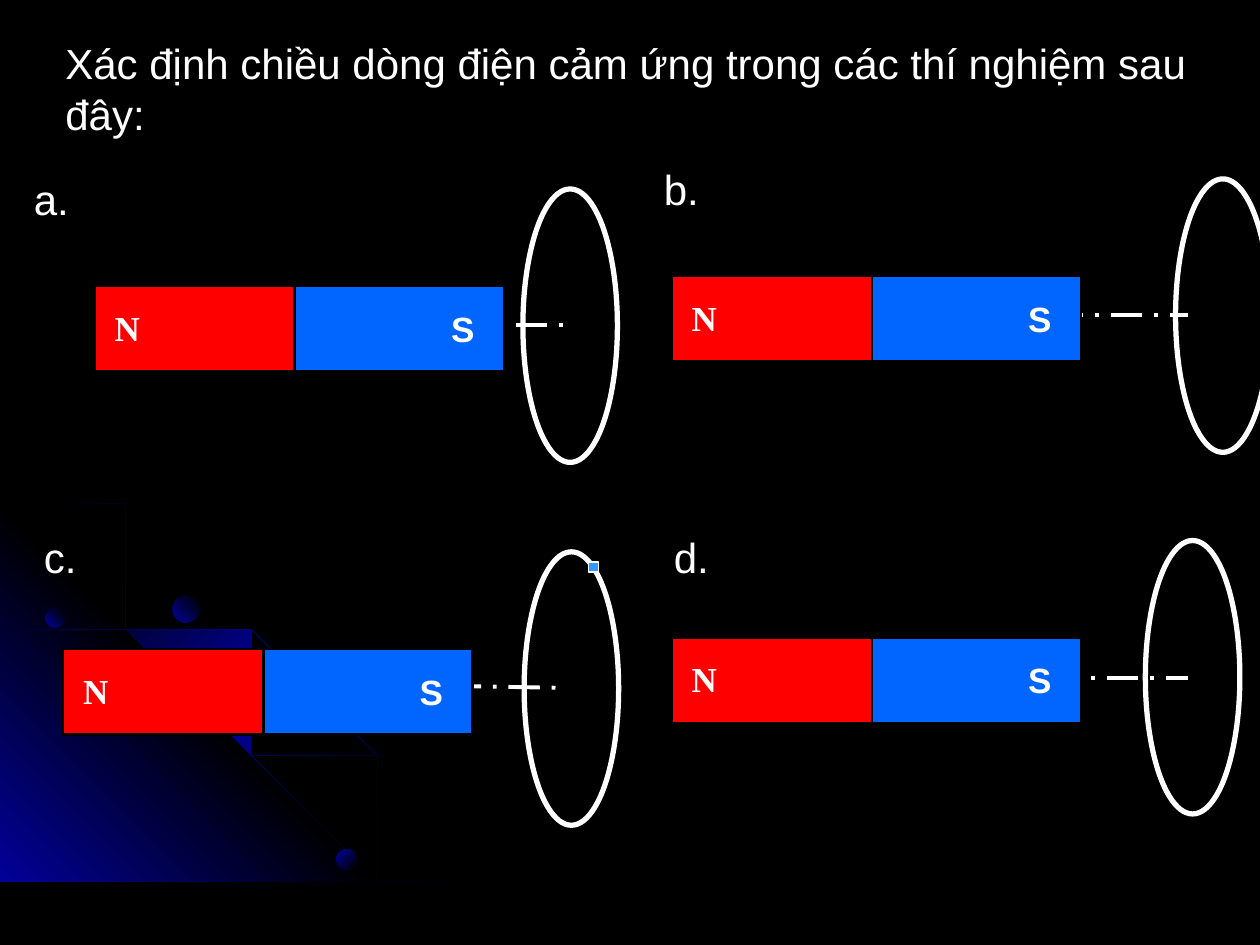
from copy import deepcopy
from pptx import Presentation
from pptx.dml.color import RGBColor
from pptx.enum.dml import MSO_LINE
from pptx.enum.shapes import MSO_CONNECTOR, MSO_SHAPE
from pptx.enum.text import MSO_AUTO_SIZE, PP_ALIGN
from pptx.oxml.ns import qn
from pptx.util import Inches, Pt

COLORS = {"black": "000000", "navy": "010199", "white": "FFFFFF",
          "red": "FF0000", "blue": "0066FF", "sky": "3399FF"}
RGB = {name: RGBColor.from_string(code) for name, code in COLORS.items()}

deck = Presentation()
deck.slide_width, deck.slide_height = Inches(10), Inches(7.5)
slide = deck.slides.add_slide(deck.slide_layouts[6])
slide.background.fill.solid()
slide.background.fill.fore_color.rgb = RGB["black"]


def blend(shape, names, angle):
    shape.shadow.inherit = False
    shape.line.fill.background()
    fill = shape.fill
    fill.gradient()
    fill.gradient_angle = 360 - angle
    stops = shape._element.spPr.find(".//" + qn("a:gsLst"))
    if len(names) == 3:
        stops.append(deepcopy(stops[-1]))
    for i, name in enumerate(names):
        stop = fill.gradient_stops[i]
        stop.position = i / (len(names) - 1)
        stop.color.rgb = RGB[name]


def write(home, words, box, size, font="Arial", bold=False):
    label = home.add_textbox(*map(Inches, box))
    frame = label.text_frame
    frame.word_wrap = True
    frame.text = words
    run = frame.paragraphs[0].runs[0].font
    run.size, run.name, run.bold = Pt(size), font, bold
    run.color.rgb = RGB["white"]
    return frame


glow = ["black", "navy", "black"]
curves = [
    ([(0.57, 4.47), (0.28, 4.41), (0, 4.35), (0, 4.38), (0.28, 4.43),
      (0.56, 4.49), (0.97, 4.61), (1.35, 4.78), (1.73, 4.99), (2.08, 5.23),
      (2.41, 5.49), (2.71, 5.79), (2.98, 6.12), (3.23, 6.49), (3.37, 6.73),
      (3.5, 6.98), (3.6, 7.23), (3.7, 7.49), (3.72, 7.49), (3.62, 7.23),
      (3.52, 6.98), (3.39, 6.73), (3.25, 6.48), (3, 6.11), (2.72, 5.78),
      (2.42, 5.48), (2.09, 5.21), (1.74, 4.97), (1.36, 4.77), (0.98, 4.59)],
     glow, 45),
    ([(3.22, 7.49), (0, 7.49), (0, 4.27)], ["navy", "black", "navy"], 315),
    ([(2.85, 7.14), (2.94, 7.32), (3.01, 7.49), (3.03, 7.49), (2.96, 7.3),
      (2.86, 7.12), (2.66, 6.76), (2.42, 6.4), (2.15, 6.06), (1.84, 5.76),
      (1.52, 5.49), (1.17, 5.26), (0.79, 5.05), (0.41, 4.88), (0, 4.75),
      (0, 4.77), (0.39, 4.9), (0.77, 5.07), (1.15, 5.28), (1.5, 5.51),
      (1.83, 5.78), (2.13, 6.08), (2.4, 6.41), (2.65, 6.77)], glow, 45),
    ([(0, 4.42), (0, 4.44), (0.36, 4.57), (0.74, 4.75), (1.09, 4.94),
      (1.42, 5.18), (1.73, 5.44), (2.02, 5.75), (2.27, 6.05), (2.52, 6.41),
      (2.67, 6.67), (2.8, 6.94), (2.92, 7.22), (3.01, 7.49), (3.03, 7.49),
      (2.94, 7.2), (2.82, 6.93), (2.69, 6.65), (2.54, 6.39), (2.29, 6.03),
      (2.04, 5.73), (1.75, 5.43), (1.44, 5.16), (1.11, 4.93), (0.76, 4.73),
      (0.39, 4.55)], glow, 45),
]
for points, names, angle in curves:
    pen = slide.shapes.build_freeform(*points[0], scale=Inches(1))
    pen.add_line_segments(points[1:], close=True)
    blend(pen.convert_to_shape(), names, angle)

for x, y, size, angle in [(0.36, 4.83, 0.15, 315), (2.67, 6.74, 0.16, 45),
                          (1.37, 4.73, 0.21, 315)]:
    dot = slide.shapes.add_shape(MSO_SHAPE.OVAL, Inches(x), Inches(y),
                                 Inches(size), Inches(size))
    blend(dot, ["navy", "black"], angle)

title = write(slide.shapes,
              "Xác định chiều dòng điện cảm ứng trong các thí nghiệm sau đây:",
              (0.42, 0.25, 9.25, 0.91), 24)
title.auto_size = MSO_AUTO_SIZE.SHAPE_TO_FIT_TEXT

tests = [
    ("a.", (0.17, 1.33), (0.75, 2.27), (4.15, 1.5), (0.83, 2.58, 4.5, 2.58)),
    ("b.", (5.17, 1.25), (5.33, 2.19), (9.33, 1.42), (8.35, 2.5, 9.43, 2.5)),
    ("c.", (0.25, 4.17), (0.5, 5.15), (4.16, 4.38), (2.17, 5.42, 4.5, 5.46)),
    ("d.", (5.25, 4.17), (5.33, 5.06), (9.09, 4.29), (6.92, 5.38, 9.43, 5.38)),
]
for name, spot, (x, y), hoop, ends in tests:
    ring = slide.shapes.add_shape(MSO_SHAPE.OVAL, *map(Inches, hoop),
                                  Inches(0.75), Inches(2.17))
    ring.shadow.inherit = False
    ring.fill.background()
    ring.line.color.rgb = RGB["white"]
    ring.line.width = Pt(3)

    axis = slide.shapes.add_connector(MSO_CONNECTOR.STRAIGHT, *map(Inches, ends))
    axis.line.color.rgb = RGB["white"]
    axis.line.width = Pt(2.25)
    axis.line.dash_style = MSO_LINE.LONG_DASH_DOT
    spot_fx = axis._element.spPr
    spot_fx.append(spot_fx.makeelement(qn("a:effectLst"), {}))

    magnet = slide.shapes.add_group_shape().shapes
    for color, shift, width in [("blue", 1.05, 2.2), ("red", 0, 1.59)]:
        half = magnet.add_shape(MSO_SHAPE.RECTANGLE, Inches(x + shift), Inches(y),
                                Inches(width), Inches(0.68))
        half.shadow.inherit = False
        half.fill.solid()
        half.fill.fore_color.rgb = RGB[color]
        half.line.color.rgb = RGB["black"]
        half.line.width = Pt(1.5)
    south = write(magnet, "S", (x + 2.83, y + 0.17, 0.29, 0.45), 20, bold=True)
    north = write(magnet, "N", (x + 0.16, y + 0.16, 0.37, 0.51), 20,
                  "Times New Roman", True)
    north.paragraphs[0].alignment = PP_ALIGN.JUSTIFY
    for pole in (south, north):
        pole.margin_left = pole.margin_right = 0
        pole.margin_top = pole.margin_bottom = 0

    label = write(slide.shapes, name, (*spot, 0.5, 0.5), 24)
    label.auto_size = MSO_AUTO_SIZE.SHAPE_TO_FIT_TEXT

mark = slide.shapes.add_shape(MSO_SHAPE.RECTANGLE, Inches(4.67), Inches(4.46),
                              Inches(0.08), Inches(0.08))
mark.shadow.inherit = False
mark.fill.solid()
mark.fill.fore_color.rgb = RGB["sky"]
mark.line.color.rgb = RGB["white"]
mark.line.width = Pt(0.75)

deck.save("out.pptx")
